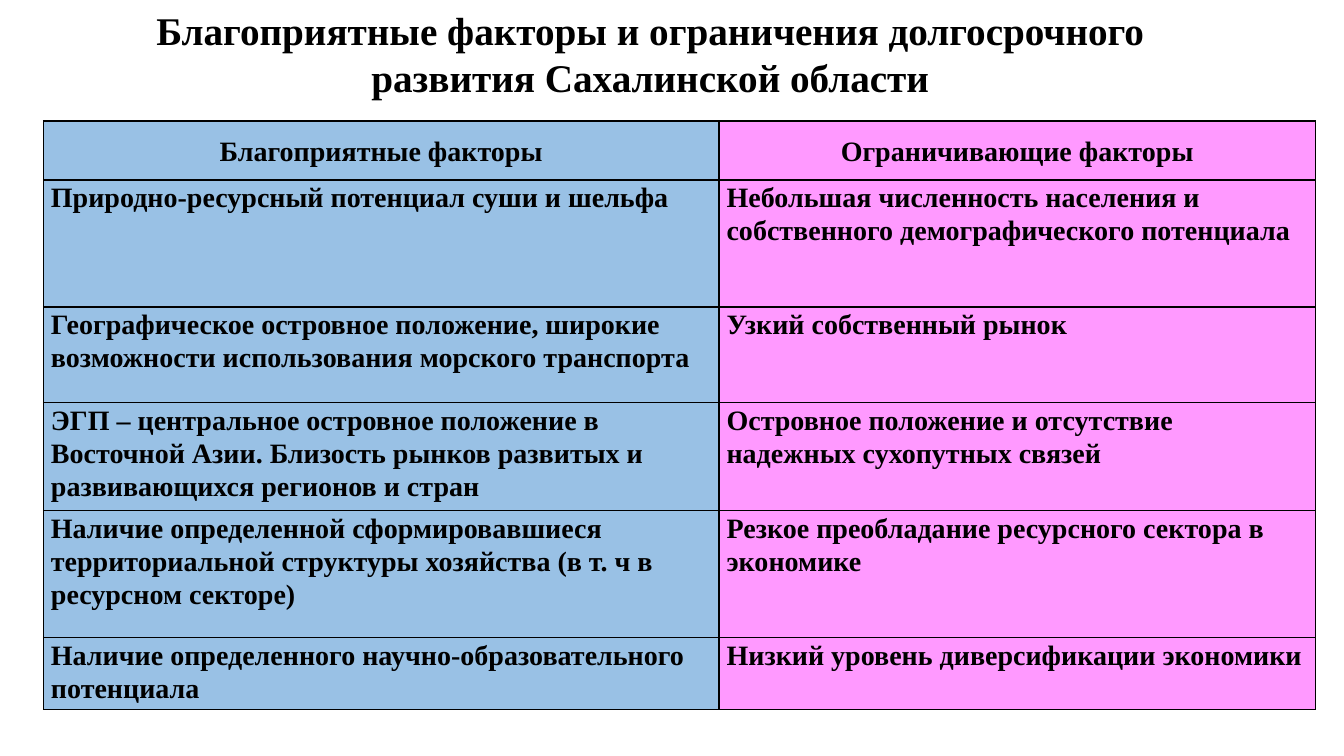
from lxml.etree import SubElement as Sub
from pptx import Presentation
from pptx.dml.color import RGBColor
from pptx.enum.text import MSO_ANCHOR as Anchor, PP_ALIGN as Align
from pptx.oxml.ns import qn
from pptx.util import Pt

BLACK = RGBColor(0x00, 0x00, 0x00)
BLUE = RGBColor(0x99, 0xC1, 0xE5)
PINK = RGBColor(0xFF, 0x99, 0xFF)
FONT = "Times New Roman"

TITLE = "Благоприятные факторы и ограничения долгосрочного развития Сахалинской области"
ROWS = [
    ("Благоприятные факторы", "Ограничивающие факторы"),
    ("Природно-ресурсный потенциал суши и шельфа",
     "Небольшая численность населения и собственного демографического потенциала"),
    ("Географическое островное положение, широкие возможности использования морского транспорта",
     "Узкий собственный рынок"),
    ("ЭГП – центральное островное положение в Восточной Азии. "
     "Близость рынков развитых и развивающихся регионов и стран",
     "Островное положение и отсутствие надежных сухопутных связей"),
    ("Наличие определенной сформировавшиеся территориальной структуры хозяйства "
     "(в т. ч в ресурсном секторе)",
     "Резкое преобладание ресурсного сектора в экономике"),
    ("Наличие определенного научно-образовательного потенциала",
     "Низкий уровень диверсификации экономики"),
]
WIDTHS = (482.6, 426)
HEIGHTS = (42.2, 90.7, 68.5, 77.2, 90.7, 51.4)


def write(frame, text, size, align):
    para = frame.paragraphs[0]
    para.alignment = align
    run = para.add_run()
    run.text = text
    font = run.font
    font.name, font.size, font.bold = FONT, Pt(size), True
    font.color.rgb = BLACK
    return para


def border(cell):
    props = cell._tc.get_or_add_tcPr()
    for side in ("lnL", "lnR", "lnT", "lnB"):
        line = Sub(props, qn(f"a:{side}"), w=str(Pt(1)))
        fill = Sub(line, qn("a:solidFill"))
        Sub(fill, qn("a:srgbClr"), val=str(BLACK))


def add_title(slide, left, top, width, height):
    title = slide.shapes.title
    title.left, title.top = Pt(left), Pt(top)
    title.width, title.height = Pt(width), Pt(height)
    frame = title.text_frame
    frame.word_wrap = True
    frame.vertical_anchor = Anchor.MIDDLE
    write(frame, TITLE, 28, Align.CENTER)


def add_grid(slide, left, top, width, height):
    shape = slide.shapes.add_table(
        len(ROWS), len(WIDTHS), Pt(left), Pt(top), Pt(width), Pt(height))
    table = shape.table
    table.first_row = table.horz_banding = False
    for col, part in zip(table.columns, WIDTHS):
        col.width = Pt(width * part / sum(WIDTHS))
    for row, part in zip(table.rows, HEIGHTS):
        row.height = Pt(height * part / sum(HEIGHTS))
    for i, texts in enumerate(ROWS):
        for j, text in enumerate(texts):
            cell = table.cell(i, j)
            cell.margin_left = cell.margin_right = Pt(5.4)
            cell.margin_top = cell.margin_bottom = Pt(0)
            cell.vertical_anchor = Anchor.TOP if i else Anchor.MIDDLE
            align = Align.LEFT if i else Align.CENTER
            write(cell.text_frame, text, 20, align).line_spacing = 1.07
            border(cell)
            cell.fill.solid()
            cell.fill.fore_color.rgb = (BLUE, PINK)[j]


def main():
    deck = Presentation()
    deck.slide_width, deck.slide_height = Pt(960), Pt(540)
    slide = deck.slides.add_slide(deck.slide_layouts[5])
    add_title(slide, 46.8, 0.7, 835.2, 75)
    add_grid(slide, 31, 86.4, sum(WIDTHS), sum(HEIGHTS))
    deck.save("out.pptx")


if __name__ == "__main__":
    main()
